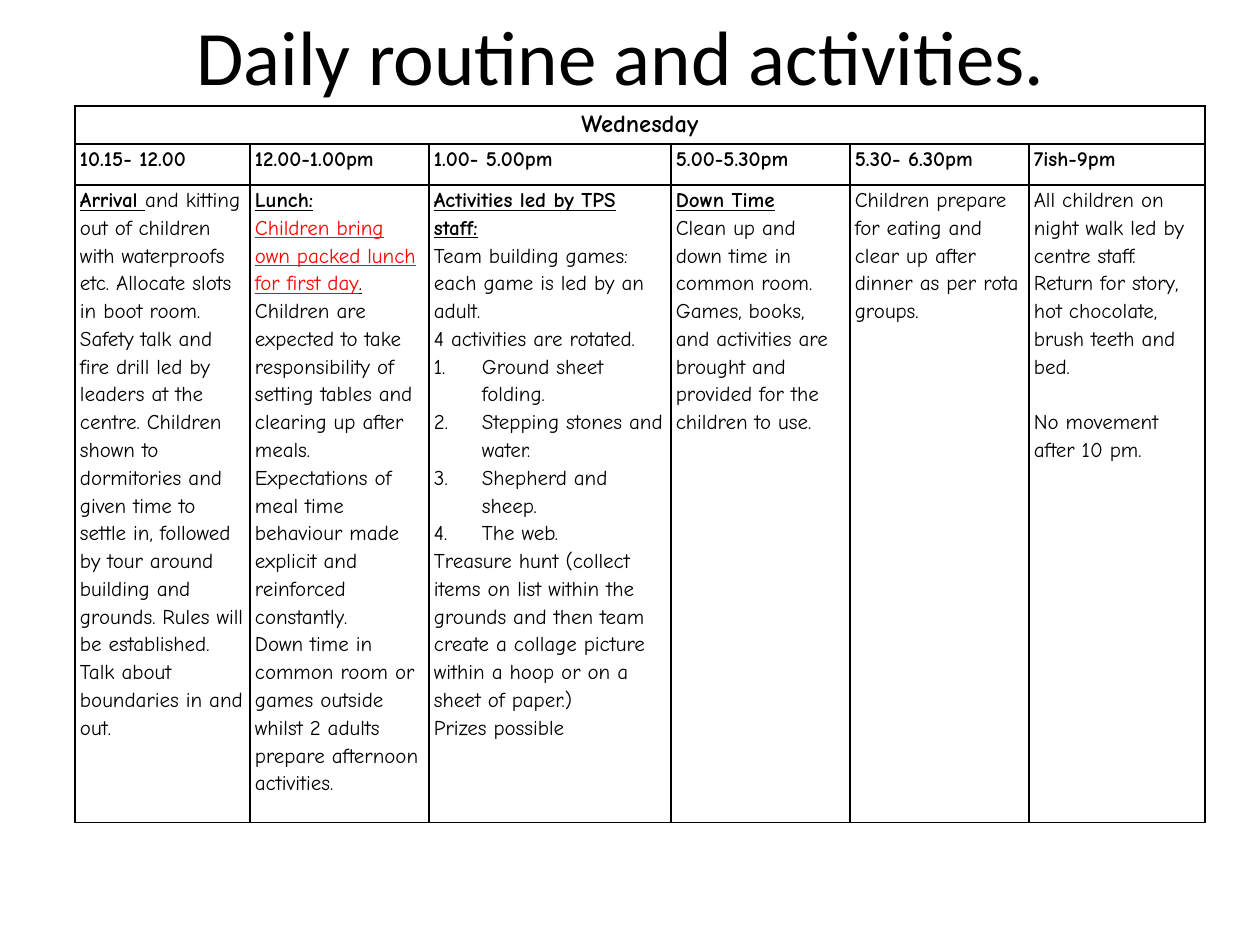
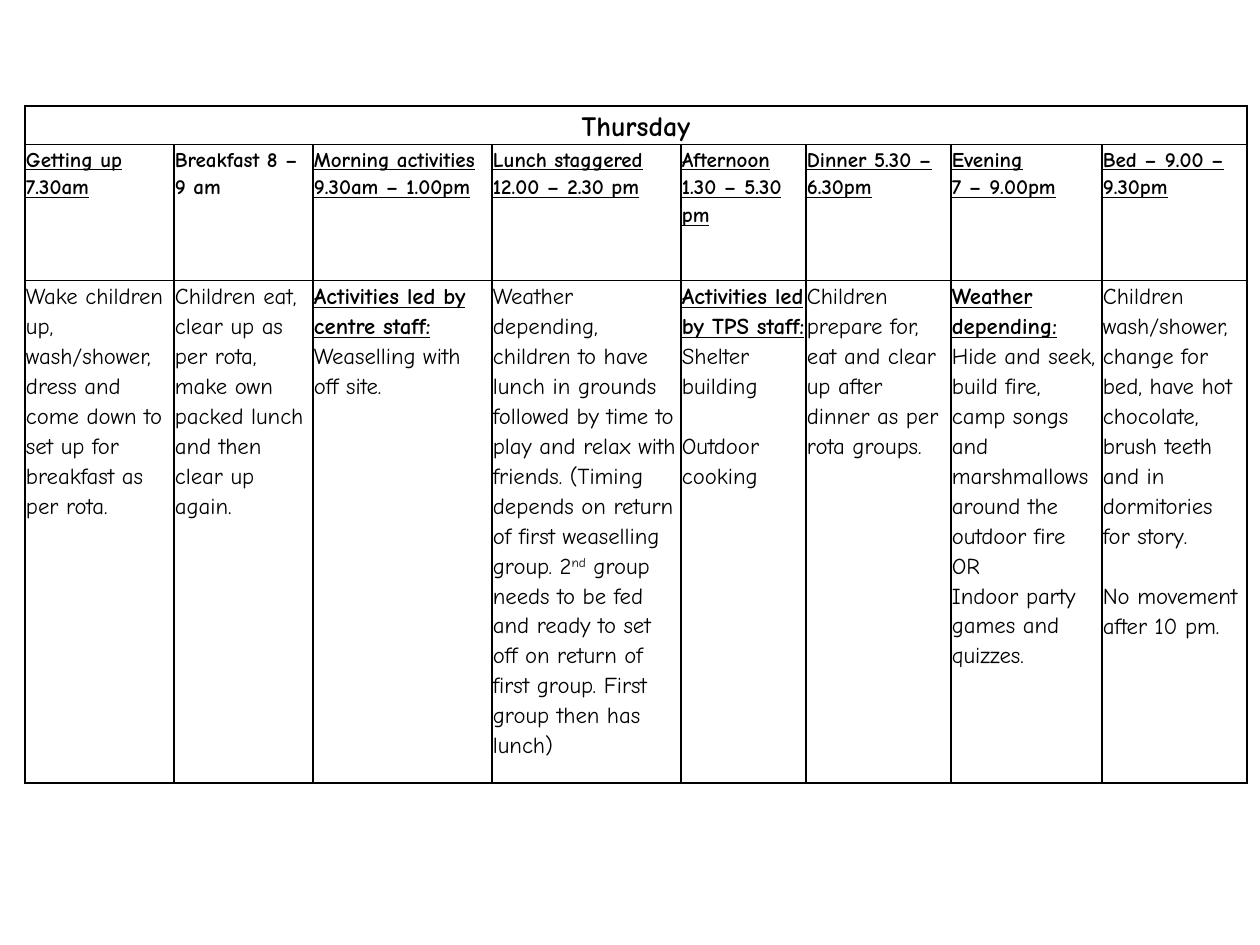
from dataclasses import dataclass, field

from lxml.etree import SubElement
from pptx import Presentation
from pptx.dml.color import RGBColor
from pptx.enum.text import MSO_ANCHOR, PP_ALIGN
from pptx.oxml import parse_xml
from pptx.oxml.ns import nsdecls, qn
from pptx.util import Pt

EMU_PER_PX = 914400 / 126


def px(n):
    return round(n * EMU_PER_PX)


@dataclass
class Theme:
    ink: str = "000000"
    alert: str = "FF0000"
    paper: str = "FFFFFF"
    title_font: str = "Calibri"
    table_font: str = "Comic Neue"
    title_size: int = 44
    label_size: int = 12
    line_spacing: float = 1.15
    blank_line: float = 1.32  # height of a skipped line, in type sizes
    rule: float = 1
    number_indent: int = 48
    # Run formats; "item" is a numbered line, "gap" follows a skipped line
    formats: dict = field(default_factory=lambda: {
        "body": {},
        "bold": {"bold": True},
        "head": {"bold": True, "underline": True},
        "line": {"underline": True},
        "warn": {"underline": True},
        "sup": {},
        "item": {},
        "gap": {},
    })


class Deck:
    def __init__(self, theme):
        self.theme = theme
        self.prs = Presentation()
        self.prs.slide_width, self.prs.slide_height = px(1260), px(945)
        self.s = None

    def slide(self):
        self.s = self.prs.slides.add_slide(self.prs.slide_layouts[6])

    def run(self, p, text, style, size, font):
        r = p.add_run()
        r.text = text
        values = {"name": font, "size": Pt(size), "bold": False,
                  "underline": False, **self.theme.formats[style]}
        for name, value in values.items():
            setattr(r.font, name, value)
        color = self.theme.alert if style == "warn" else self.theme.ink
        r.font.color.rgb = RGBColor.from_string(color)
        if style == "sup":
            r.font._element.set("baseline", "30000")

    def title(self, text, x, y, w, h):
        sp = self.s.shapes.add_textbox(px(x), px(y), px(w), px(h))
        tf = sp.text_frame
        tf.word_wrap = True
        tf.vertical_anchor = MSO_ANCHOR.MIDDLE
        p = tf.paragraphs[0]
        p.alignment = PP_ALIGN.CENTER
        self.run(p, text, "body", self.theme.title_size, self.theme.title_font)

    def borders(self, cell):
        tc_pr = cell._tc.get_or_add_tcPr()
        for i, side in enumerate(("lnL", "lnR", "lnT", "lnB")):
            tc_pr.insert(i, parse_xml(
                f'<a:{side} {nsdecls("a")} w="{Pt(self.theme.rule)}"><a:solidFill>'
                f'<a:srgbClr val="{self.theme.ink}"/></a:solidFill></a:{side}>'))

    def paragraph(self, p, runs, size, align):
        t = self.theme
        p.alignment, p.line_spacing = align, t.line_spacing
        style = runs[0][0]
        if style == "gap":
            p.space_before = Pt(round(size * t.blank_line, 1))
        if style == "item":
            p_pr = p._p.get_or_add_pPr()
            p_pr.set("marL", str(px(t.number_indent)))
            p_pr.set("indent", str(-px(t.number_indent)))
            SubElement(p_pr, qn("a:buFont")).set("typeface", t.table_font)
            SubElement(p_pr, qn("a:buAutoNum")).set("type", "arabicPeriod")
        for run_style, text in runs:
            self.run(p, text, run_style, size, t.table_font)

    def cell(self, cell, paragraphs, size, align=PP_ALIGN.LEFT):
        tf = cell.text_frame
        for i, content in enumerate(paragraphs):
            p = tf.paragraphs[0] if i == 0 else tf.add_paragraph()
            if isinstance(content, str):
                content = ("body", content)
            runs = content if isinstance(content, list) else [content]
            self.paragraph(p, runs, size, align)

    def timetable(self, day, columns, x, y, heights, inset, day_size, body_size):
        """Columns are (width, time paragraphs, activity paragraphs)."""
        width = sum(c[0] for c in columns)
        frame = self.s.shapes.add_table(len(heights), len(columns), px(x), px(y),
                                        px(width), px(sum(heights)))
        table = frame.table
        table.first_row = table.horz_banding = False
        for row, h in zip(table.rows, heights):
            row.height = px(h)
        look = {"margin_left": px(inset), "margin_right": px(inset),
                "margin_top": 0, "margin_bottom": 0,
                "vertical_anchor": MSO_ANCHOR.TOP}
        for cell in table.iter_cells():
            for name, value in look.items():
                setattr(cell, name, value)
            cell.fill.solid()
            cell.fill.fore_color.rgb = RGBColor.from_string(self.theme.paper)
            self.borders(cell)
        # Day across the top, then times over activities
        table.cell(0, 0).merge(table.cell(0, len(columns) - 1))
        self.cell(table.cell(0, 0), [("bold", day)], day_size, PP_ALIGN.CENTER)
        for i, (w, times, activities) in enumerate(columns):
            table.columns[i].width = px(w)
            self.cell(table.cell(1, i), times, self.theme.label_size)
            self.cell(table.cell(2, i), activities, body_size)


LATE = ("gap", "No movement after 10 pm.")

WEDNESDAY = [
    (175, [("bold", "10.15- 12.00")], [
        [("head", "Arrival "),
         ("body", "and kitting out of children with waterproofs etc. Allocate slots "
                  "in boot room. Safety talk and fire drill led by leaders at the "
                  "centre. Children shown to dormitories and given time to settle in, "
                  "followed by tour around building and grounds. Rules will be "
                  "established. Talk about boundaries in and out.")]]),
    (179, [("bold", "12.00-1.00pm")], [
        ("head", "Lunch:"),
        [("warn", "Children bring own packed lunch for first day"), ("line", ".")],
        "Children are expected to take responsibility of setting tables and "
        "clearing up after meals.",
        "Expectations of meal time behaviour made explicit and reinforced constantly.",
        "Down time in common room or games outside whilst 2 adults prepare "
        "afternoon activities."]),
    (242, [("bold", "1.00- 5.00pm")], [
        ("head", "Activities led by TPS staff:"),
        "Team building games: each game is led by an adult.",
        "4 activities are rotated.",
        ("item", "Ground sheet folding."),
        ("item", "Stepping stones and water."),
        ("item", "Shepherd and sheep."),
        ("item", "The web."),
        "Treasure hunt (collect items on list within the grounds and then team "
        "create a collage picture within a hoop or on a sheet of paper.)",
        "Prizes possible"]),
    (179, [("bold", "5.00-5.30pm")], [
        ("head", "Down Time"),
        "Clean up and down time in common room. Games, books, and activities are "
        "brought and provided for the children to use."]),
    (179, [("bold", "5.30- 6.30pm")], [
        "Children prepare for eating and clear up after dinner as per rota groups."]),
    (176, [("bold", "7ish-9pm")], [
        "All children on night walk led by centre staff. Return for story, hot "
        "chocolate, brush teeth and bed.",
        LATE]),
]

THURSDAY = [
    (149, [("head", "Getting up 7.30am")], [
        "Wake children up, wash/shower, dress and come down to set up for "
        "breakfast as per rota."]),
    (139, [("bold", "Breakfast 8 – 9 am")], [
        "Children eat, clear up as per rota, make own packed lunch and then "
        "clear up again."]),
    (179, [("head", "Morning activities 9.30am – 1.00pm")], [
        ("head", "Activities led by centre staff:"),
        "Weaselling with off site."]),
    (189, [("head", "Lunch staggered 12.00 – 2.30 pm")], [
        [("body", "Weather depending, children to have lunch in grounds followed by "
                  "time to play and relax with friends. (Timing depends on return of "
                  "first weaselling group. 2"),
         ("sup", "nd"),
         ("body", " group needs to be fed and ready to set off on return of first "
                  "group. First group then has lunch)")]]),
    (125, [("head", "Afternoon 1.30 – 5.30 pm")], [
        ("head", "Activities led by TPS staff:"),
        "Shelter building",
        ("gap", "Outdoor cooking")]),
    (145, [("head", "Dinner 5.30 – 6.30pm")], [
        "Children prepare for, eat and clear up after dinner as per rota groups."]),
    (151, [("head", "Evening"), ("head", "7 – 9.00pm")], [
        ("head", "Weather depending:"),
        "Hide and seek, build fire, camp songs and marshmallows around the "
        "outdoor fire",
        "OR",
        "Indoor party games and quizzes."]),
    (145, [("head", "Bed – 9.00 – 9.30pm")], [
        "Children wash/shower, change for bed, have hot chocolate, brush teeth "
        "and in dormitories for story.",
        LATE]),
]


def main():
    deck = Deck(Theme())

    # Wednesday
    deck.slide()
    deck.title("Daily routine and activities.", 54, -4, 1134, 118)
    deck.timetable("Wednesday", WEDNESDAY, 75, 106, (38, 41, 612),
                   inset=5, day_size=14, body_size=12)

    # Thursday
    deck.slide()
    deck.timetable("Thursday", THURSDAY, 25, 106, (37, 136, 479),
                   inset=1, day_size=16, body_size=13)

    deck.prs.save("out.pptx")


if __name__ == "__main__":
    main()
